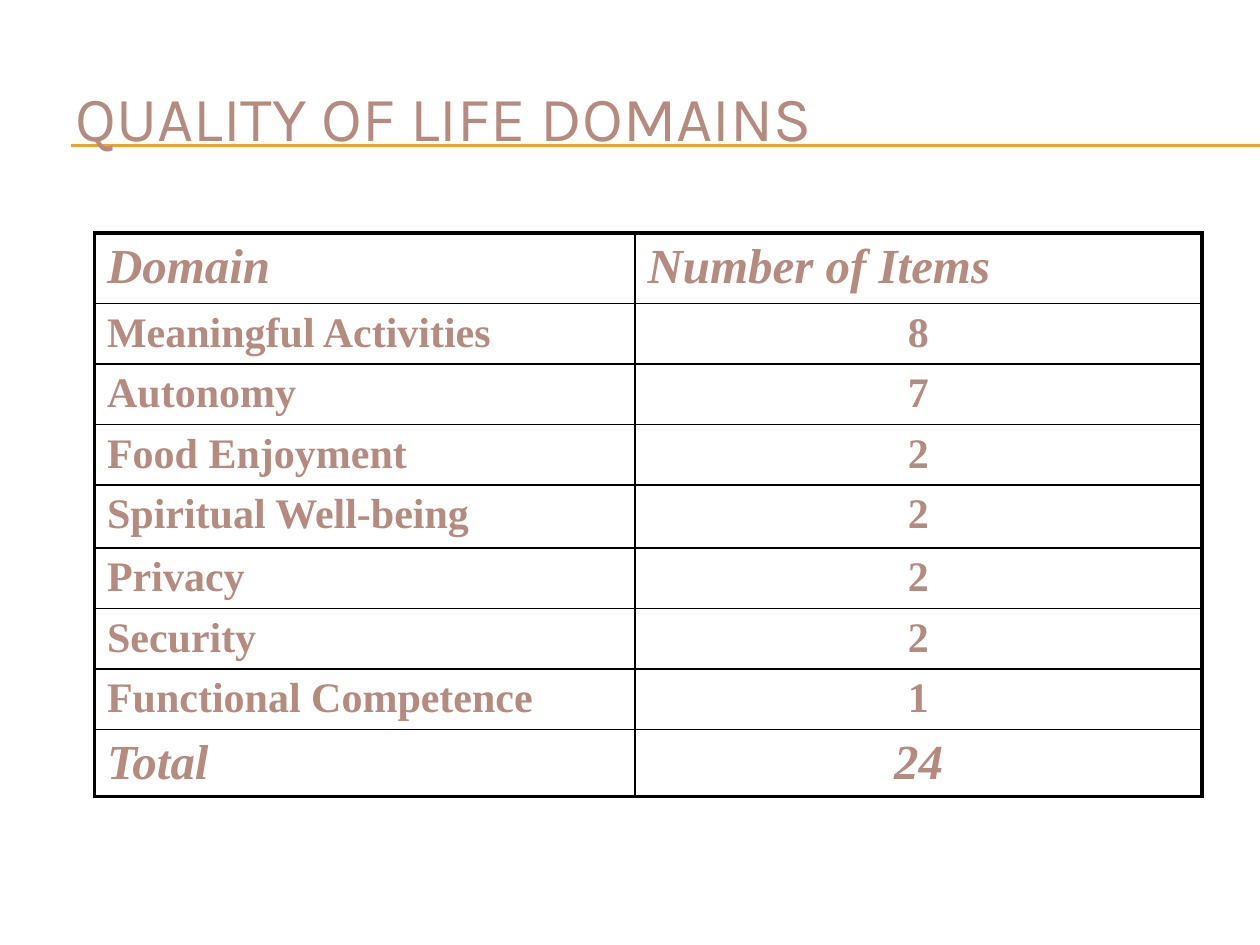
from dataclasses import dataclass

from lxml import etree
from pptx import Presentation
from pptx.dml.color import RGBColor
from pptx.enum.shapes import MSO_CONNECTOR
from pptx.enum.text import MSO_ANCHOR, PP_ALIGN
from pptx.oxml.ns import qn
from pptx.util import Inches, Pt

STRAIGHT = MSO_CONNECTOR.STRAIGHT
MIDDLE = MSO_ANCHOR.MIDDLE
LEFT, CENTER = PP_ALIGN.LEFT, PP_ALIGN.CENTER


@dataclass(frozen=True)
class Theme:
    text: str = "B58B80"
    rule: str = "F0A22E"
    border: str = "000000"
    title_font: str = "Karla"
    table_font: str = "Times New Roman"
    title_size: float = 36
    accent_size: float = 28
    body_size: float = 24
    rule_width: float = 0.75
    inner_width: float = 1
    outer_width: float = 2.25


THEME = Theme()
WIDTH, HEIGHT = Inches(10), Inches(7.5)
ROWS = [
    ("Domain", "Number of Items"),
    ("Meaningful Activities", "8"),
    ("Autonomy", "7"),
    ("Food Enjoyment", "2"),
    ("Spiritual Well-being", "2"),
    ("Privacy", "2"),
    ("Security", "2"),
    ("Functional Competence", "1"),
    ("Total", "24"),
]
COLUMN_WIDTHS = [4.29, 4.5]
ROW_HEIGHTS = [0.56, 0.48, 0.48, 0.48, 0.5, 0.48, 0.48, 0.48, 0.49]


def style_font(font, name, size, bold=False, italic=False):
    font.name, font.size = name, Pt(size)
    font.bold, font.italic = bold, italic
    font.color.rgb = RGBColor.from_string(THEME.text)


def add_heading(s, left, top, width, height):
    title = s.shapes.title
    title.left, title.top, title.width, title.height = left, top, width, height
    tf = title.text_frame
    tf.word_wrap = True
    tf.vertical_anchor = MIDDLE
    tf.text = "QUALITY OF LIFE DOMAINS"
    p = tf.paragraphs[0]
    p.alignment = LEFT
    style_font(p.font, THEME.title_font, THEME.title_size)


def add_rules(s, left, right, tops):
    """Draw the horizontal rules behind the heading."""
    for top in tops:
        rule = s.shapes.add_connector(STRAIGHT, left, top, right, top)
        rule.line.color.rgb = RGBColor.from_string(THEME.rule)
        rule.line.width = Pt(THEME.rule_width)
        etree.SubElement(rule._element.spPr, qn("a:effectLst"))
        s.shapes.title._element.addprevious(rule._element)


def set_borders(cell, outer_sides):
    tc_pr = cell._tc.get_or_add_tcPr()
    for side in "LRTB":
        width = THEME.outer_width if side in outer_sides else THEME.inner_width
        ln = etree.SubElement(tc_pr, qn(f"a:ln{side}"), w=str(Pt(width)))
        fill = etree.SubElement(ln, qn("a:solidFill"))
        etree.SubElement(fill, qn("a:srgbClr"), val=THEME.border)


def set_space_before(p, percent):
    """Set spacing as a share of the text size."""
    space = etree.SubElement(p._p.get_or_add_pPr(), qn("a:spcBef"))
    etree.SubElement(space, qn("a:spcPct"), val=str(percent * 1000))


def fill_cell(cell, text, accent, centered, outer_sides):
    cell.text = text
    p = cell.text_frame.paragraphs[0]
    p.alignment = CENTER if centered else LEFT
    set_space_before(p, 20)
    size = THEME.accent_size if accent else THEME.body_size
    style_font(p.font, THEME.table_font, size, bold=True, italic=accent)
    set_borders(cell, outer_sides)
    cell.fill.background()


def add_domain_table(s, left, top, width, height):
    table = s.shapes.add_table(len(ROWS), len(COLUMN_WIDTHS),
                               left, top, width, height).table
    table.horz_banding = False
    for column, share in zip(table.columns, COLUMN_WIDTHS):
        column.width = int(width * share / sum(COLUMN_WIDTHS))
    for row, share in zip(table.rows, ROW_HEIGHTS):
        row.height = int(height * share / sum(ROW_HEIGHTS))

    last = len(ROWS) - 1
    for i, values in enumerate(ROWS):
        edge = {0: "T", last: "B"}.get(i, "")
        for j, text in enumerate(values):
            fill_cell(table.cell(i, j), text, accent=bool(edge),
                      centered=i > 0 and j > 0, outer_sides="LR"[j] + edge)


def main():
    prs = Presentation()
    prs.slide_width, prs.slide_height = WIDTH, HEIGHT
    s = prs.slides.add_slide(prs.slide_layouts[5])
    add_heading(s, Inches(0.5), Inches(0.67), Inches(9.25), Inches(0.5))
    add_rules(s, Inches(0.56), WIDTH, [Inches(1.15), Inches(1.16)])
    add_domain_table(s, Inches(0.75), Inches(1.85),
                     Inches(sum(COLUMN_WIDTHS)), Inches(sum(ROW_HEIGHTS)))
    prs.save("out.pptx")


if __name__ == "__main__":
    main()
